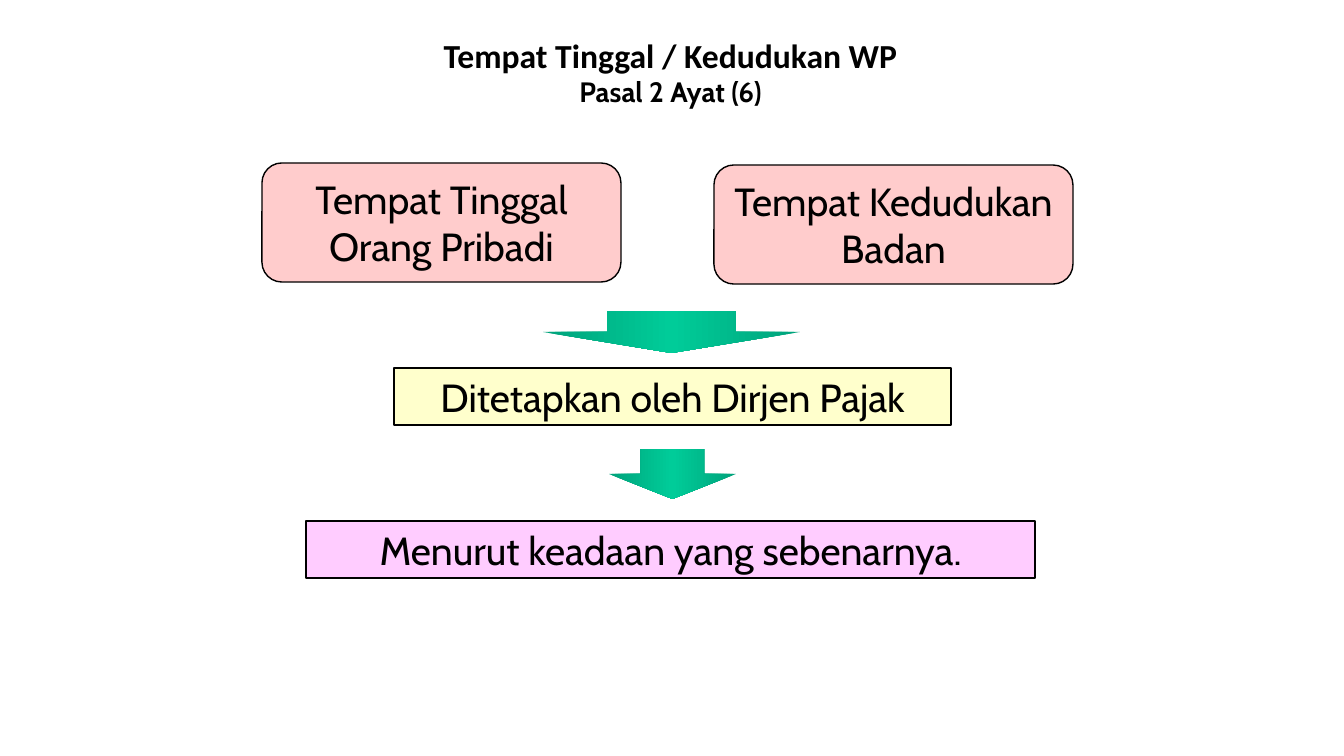
from copy import deepcopy

from pptx import Presentation
from pptx.dml.color import RGBColor
from pptx.enum.shapes import MSO_SHAPE
from pptx.enum.text import MSO_ANCHOR, PP_ALIGN
from pptx.oxml.ns import qn
from pptx.util import Emu, Pt

SLIDE_WIDTH, SLIDE_HEIGHT = 1344, 756
EMU_PER_PX = 12192000 / SLIDE_WIDTH

BLACK = RGBColor(0x00, 0x00, 0x00)
PINK = RGBColor(0xFF, 0xCC, 0xCC)
YELLOW = RGBColor(0xFF, 0xFF, 0xCC)
VIOLET = RGBColor(0xFF, 0xCC, 0xFF)
GREEN = RGBColor(0x00, 0xCC, 0x99)
DARK_GREEN = RGBColor(0x00, 0xA3, 0x7B)


def px(length):
    """Turn a length in px into EMU."""
    return Emu(round(length * EMU_PER_PX))


def add_plain_shape(slide, kind, box):
    """Add a preset shape without shadow, fill or line."""
    shape = slide.shapes.add_shape(kind, *map(px, box))
    shape.shadow.inherit = False
    shape.fill.background()
    shape.line.fill.background()
    return shape


def write_lines(shape, lines, wrap):
    """Write centred lines given as (text, font name, size, bold)."""
    frame = shape.text_frame
    frame.word_wrap = wrap
    frame.vertical_anchor = MSO_ANCHOR.MIDDLE
    frame.text = "\n".join(line[0] for line in lines)
    for paragraph, (_, name, size, bold) in zip(frame.paragraphs, lines):
        paragraph.alignment = PP_ALIGN.CENTER
        paragraph.font.name = name
        paragraph.font.size = Pt(size)
        paragraph.font.bold = bold
        paragraph.font.color.rgb = BLACK


def add_title(slide, box):
    """Add the two-line heading."""
    shape = add_plain_shape(slide, MSO_SHAPE.RECTANGLE, box)
    lines = [("Tempat Tinggal / Kedudukan WP", "Calibri", 24, True),
             ("Pasal 2 Ayat (6)", "Cabin", 20, True)]
    write_lines(shape, lines, False)


def add_label_box(slide, kind, box, color, texts):
    """Add an outlined, filled box with lines of text."""
    shape = add_plain_shape(slide, kind, box)
    shape.fill.solid()
    shape.fill.fore_color.rgb = color
    shape.line.color.rgb = BLACK
    shape.line.width = Pt(1)
    lines = [(text, "Cabin", 28, False) for text in texts]
    write_lines(shape, lines, len(texts) == 1)


def add_down_arrow(slide, box):
    """Add a down arrow shaded from dark edges to a bright middle."""
    shape = add_plain_shape(slide, MSO_SHAPE.DOWN_ARROW, box)
    shape.fill.gradient()
    shape.fill.gradient_angle = 0
    stop_list = shape.element.spPr.find(qn("a:gradFill")).find(qn("a:gsLst"))
    stop_list.insert(1, deepcopy(stop_list[0]))
    stops = zip(shape.fill.gradient_stops, (0, 0.5, 1), (DARK_GREEN, GREEN, DARK_GREEN))
    for stop, position, color in stops:
        stop.position = position
        stop.color.rgb = color


def main():
    """Build the slide and save it."""
    presentation = Presentation()
    presentation.slide_width = px(SLIDE_WIDTH)
    presentation.slide_height = px(SLIDE_HEIGHT)
    slide = presentation.slides.add_slide(presentation.slide_layouts[6])

    add_title(slide, (306, 17, 729, 109))
    label_boxes = [
        (MSO_SHAPE.ROUNDED_RECTANGLE, (262, 163, 359, 119), PINK,
         ["Tempat Tinggal", "Orang Pribadi"]),
        (MSO_SHAPE.ROUNDED_RECTANGLE, (714, 165, 359, 119), PINK,
         ["Tempat Kedudukan", "Badan"]),
        (MSO_SHAPE.RECTANGLE, (394, 368, 557, 57), YELLOW,
         ["Ditetapkan oleh Dirjen Pajak"]),
        (MSO_SHAPE.RECTANGLE, (306, 521, 729, 57), VIOLET,
         ["Menurut keadaan yang sebenarnya."]),
    ]
    for label_box in label_boxes:
        add_label_box(slide, *label_box)
    for arrow_box in ((543, 311, 257, 42), (609, 449, 127, 50)):
        add_down_arrow(slide, arrow_box)
    presentation.save("out.pptx")


if __name__ == "__main__":
    main()
